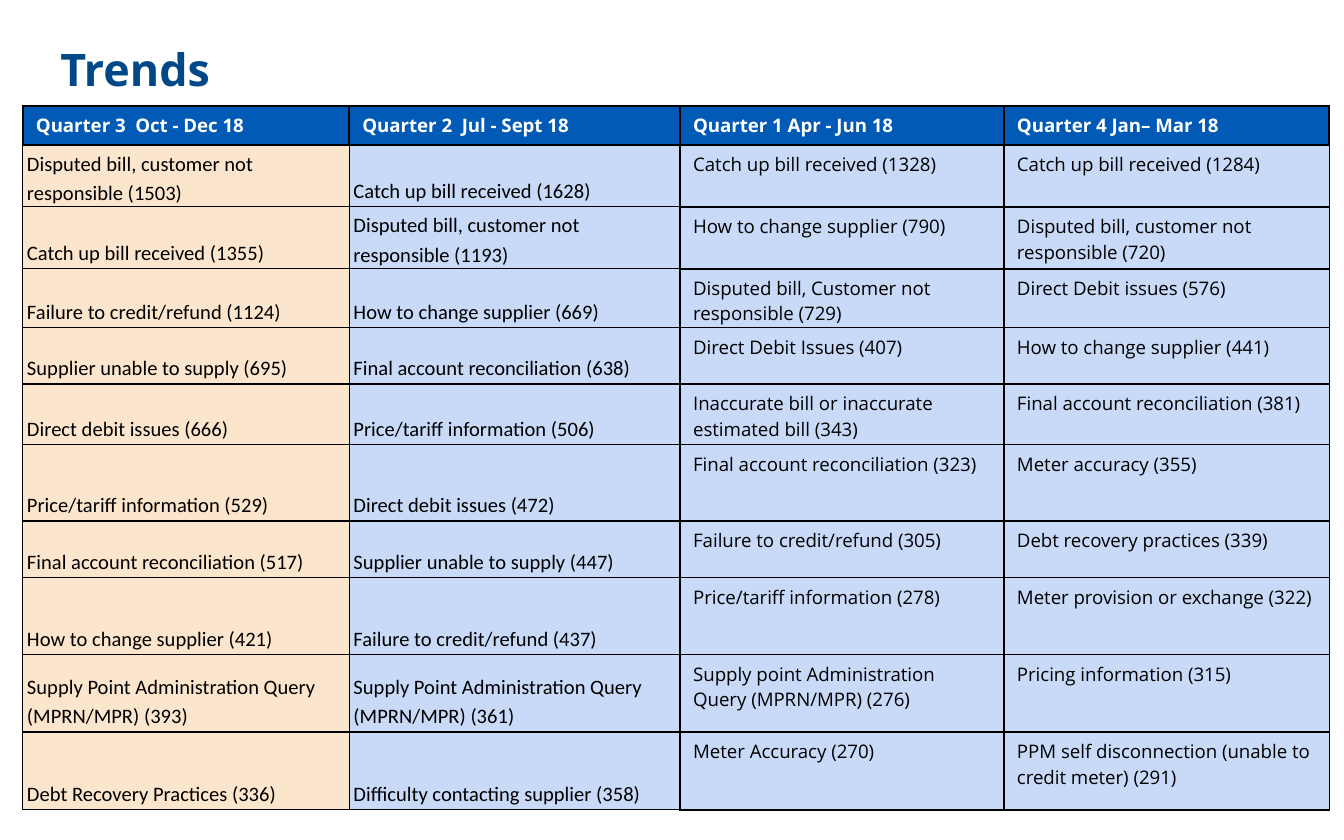
import pptx
import pptx.dml.color
import pptx.enum.text
import pptx.oxml
import pptx.oxml.ns
import pptx.util

Cm = pptx.util.Cm
Pt = pptx.util.Pt
ANCHOR = pptx.enum.text.MSO_ANCHOR


def color(value):
    return pptx.dml.color.RGBColor.from_string(value)


def add_borders(cell, widths):
    """Draw black cell borders; widths are points for left, right, top, bottom."""
    properties = cell._tc.get_or_add_tcPr()
    for side, width in zip("LRTB", widths):
        properties.append(pptx.oxml.parse_xml(
            f'<a:ln{side} {pptx.oxml.ns.nsdecls("a")} w="{Pt(width)}">'
            '<a:solidFill><a:srgbClr val="000000"/></a:solidFill>'
            f'</a:ln{side}>'))


HEADERS = ["Quarter 3  Oct - Dec 18", "Quarter 2  Jul - Sept 18",
           "Quarter 1 Apr - Jun 18", "Quarter 4 Jan– Mar 18"]
TRENDS = [
    ["Disputed bill, customer not responsible (1503)", "Catch up bill received (1628)",
     "Catch up bill received (1328)", "Catch up bill received (1284)"],
    ["Catch up bill received (1355)", "Disputed bill, customer not responsible (1193)",
     "How to change supplier (790)", "Disputed bill, customer not responsible (720)"],
    ["Failure to credit/refund (1124)", "How to change supplier (669)",
     "Disputed bill, Customer not responsible (729)", "Direct Debit issues (576)"],
    ["Supplier unable to supply (695)", "Final account reconciliation (638)",
     "Direct Debit Issues (407)", "How to change supplier (441)"],
    ["Direct debit issues (666)", "Price/tariff information (506)",
     "Inaccurate bill or inaccurate estimated bill (343)",
     "Final account reconciliation (381)"],
    ["Price/tariff information (529)", "Direct debit issues (472)",
     "Final account reconciliation (323)", "Meter accuracy (355)"],
    ["Final account reconciliation (517)", "Supplier unable to supply (447)",
     "Failure to credit/refund (305)", "Debt recovery practices (339)"],
    ["How to change supplier (421)", "Failure to credit/refund (437)",
     "Price/tariff information (278)", "Meter provision or exchange (322)"],
    ["Supply Point Administration Query (MPRN/MPR) (393)",
     "Supply Point Administration Query (MPRN/MPR) (361)",
     "Supply point Administration Query (MPRN/MPR) (276)", "Pricing information (315)"],
    ["Debt Recovery Practices (336)", "Difficulty contacting supplier (358)",
     "Meter Accuracy (270)", "PPM self disconnection (unable to credit meter) (291)"],
]
COLUMN_WIDTHS = [6.17, 6.25, 6.12, 6.15]
ROW_HEIGHTS = [0.74, 1.07, 1.07, 1.04, 1.07, 1.14, 1.45, 1.07, 1.45, 1.47, 1.47]
BODY_FILLS = ["FCE5CD", "C9DAF8", "C9DAF8", "C9DAF8"]
HEADER_BORDERS = [(1, 1, 1, 0.75)] * 2 + [(1, 1, 1, 1)] * 2
BODY_BORDERS = [(0.75,) * 4, (0.75,) * 4, (0.75, 1, 1, 1), (1, 0.75, 1, 1)]

WIDE_CELL = {"margin_left": Cm(0.25), "margin_right": Cm(0.25),
             "margin_top": Cm(0.13), "margin_bottom": Cm(0.13),
             "vertical_anchor": ANCHOR.TOP}
TIGHT_CELL = {"margin_left": Cm(0.08), "margin_right": Cm(0.08),
              "margin_top": Cm(0.05), "margin_bottom": Cm(0.05),
              "vertical_anchor": ANCHOR.BOTTOM}
TITLE_FONT = {"name": "Open Sans", "size": Pt(24), "bold": True}
HEADER_FONT = {"name": "Open Sans", "size": Pt(10), "bold": True}
RECENT_FONT = {"name": "Calibri", "size": Pt(11), "bold": False}
EARLIER_FONT = {"name": "Open Sans", "size": Pt(10), "bold": False}

deck = pptx.Presentation()
deck.slide_width = Cm(25.4)
deck.slide_height = Cm(15.88)
slide = deck.slides.add_slide(deck.slide_layouts[6])

# Title
box = slide.shapes.add_textbox(Cm(0.89), Cm(0.53), Cm(22.86), Cm(2.64))
frame = box.text_frame
frame_format = {"word_wrap": True, "vertical_anchor": ANCHOR.TOP,
                "margin_left": Cm(0.25), "margin_right": Cm(0.25),
                "margin_top": Cm(0.25), "margin_bottom": Cm(0.25)}
for name, value in frame_format.items():
    setattr(frame, name, value)
span = frame.paragraphs[0].add_run()
span.text = "Trends"
for name, value in TITLE_FONT.items():
    setattr(span.font, name, value)
span.font.color.rgb = color("004888")

# Table of the ten most frequent issues per quarter
table = slide.shapes.add_table(
    len(ROW_HEIGHTS), len(COLUMN_WIDTHS), Cm(0.43), Cm(2),
    Cm(sum(COLUMN_WIDTHS)), Cm(sum(ROW_HEIGHTS))).table
table.horz_banding = False
for column, width in zip(table.columns, COLUMN_WIDTHS):
    column.width = Cm(width)
for row, height in zip(table.rows, ROW_HEIGHTS):
    row.height = Cm(height)

for row_index, texts in enumerate([HEADERS] + TRENDS):
    for column_index, text in enumerate(texts):
        is_header = row_index == 0
        is_recent = not is_header and column_index < 2
        cell = table.cell(row_index, column_index)
        for name, value in (TIGHT_CELL if is_recent else WIDE_CELL).items():
            setattr(cell, name, value)
        add_borders(cell, (HEADER_BORDERS if is_header else BODY_BORDERS)[column_index])
        cell.fill.solid()
        cell.fill.fore_color.rgb = color("005AB6" if is_header else BODY_FILLS[column_index])

        para = cell.text_frame.paragraphs[0]
        if is_recent:
            para.line_spacing = 1.15
        span = para.add_run()
        span.text = text
        font = HEADER_FONT if is_header else RECENT_FONT if is_recent else EARLIER_FONT
        for name, value in font.items():
            setattr(span.font, name, value)
        span.font.color.rgb = color("FFFFFF" if is_header else "000000")

deck.save("out.pptx")
